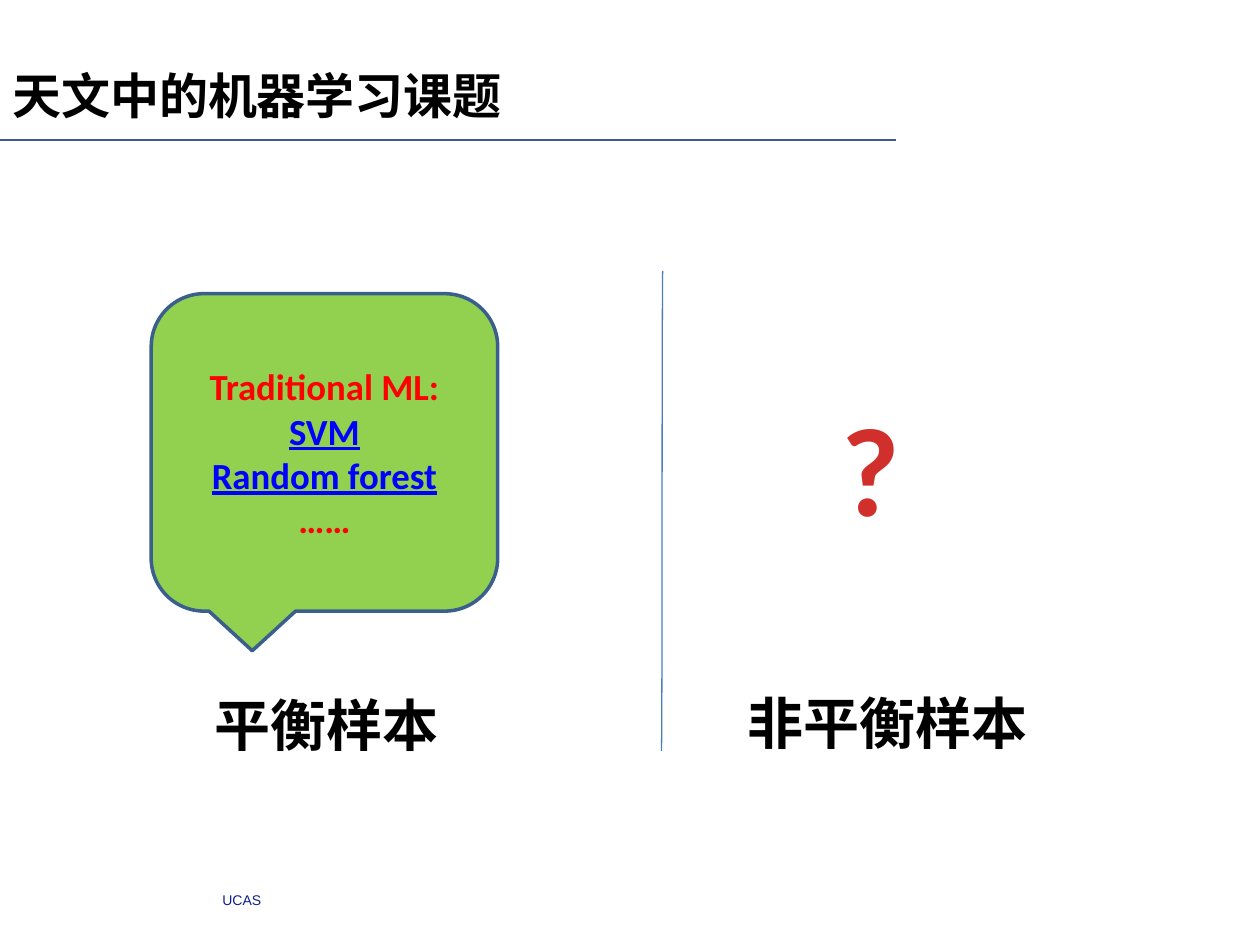
from dataclasses import dataclass

from lxml import etree
from pptx import Presentation
from pptx.dml.color import RGBColor
from pptx.enum.shapes import MSO_CONNECTOR, MSO_SHAPE
from pptx.enum.text import MSO_ANCHOR, PP_ALIGN
from pptx.oxml.ns import qn
from pptx.util import Pt

STRAIGHT, CURVE = MSO_CONNECTOR.STRAIGHT, MSO_CONNECTOR.CURVE
CALLOUT = MSO_SHAPE.ROUNDED_RECTANGULAR_CALLOUT
LEFT, CENTER = PP_ALIGN.LEFT, PP_ALIGN.CENTER
TOP, MIDDLE = MSO_ANCHOR.TOP, MSO_ANCHOR.MIDDLE


@dataclass(frozen=True)
class Theme:
    chinese: str = "Noto Sans CJK SC"
    latin: str = "Calibri"
    footer_font: str = "Arial"
    ink: str = "000000"
    rule: str = "415898"
    divider: str = "4B7EBC"
    footer: str = "0F208B"
    question: str = "D02F2C"
    bubble: str = "92D050"
    outline: str = "3A5F8C"
    accent: str = "FF0000"
    method: str = "0000FF"
    title_size: int = 28
    label_size: int = 32
    question_size: int = 72
    bubble_size: int = 21
    footer_size: int = 8


class SlideBuilder:
    """Draw styled elements on one page, with lengths in points."""

    def __init__(self, theme, page):
        self.theme = theme
        self.page = page

    def line(self, kind, start, end, color, width):
        connector = self.page.shapes.add_connector(kind, *map(Pt, start + end))
        connector.line.color.rgb = RGBColor.from_string(color)
        connector.line.width = Pt(width)
        etree.SubElement(connector._element.spPr, qn("a:effectLst"))

    def span(self, para, text, color, name, size, **formats):
        span = para.add_run()
        span.text = text
        values = {"name": name, "size": Pt(size), "bold": True, **formats}
        for key, value in values.items():
            setattr(span.font, key, value)
        span.font.color.rgb = RGBColor.from_string(color)
        etree.SubElement(span._r.rPr, qn("a:ea"), typeface=name)

    def text(self, area, text, color, name, size, align=LEFT, wrap=True, **formats):
        box = self.page.shapes.add_textbox(*map(Pt, area))
        frame = box.text_frame
        for key, value in {"word_wrap": wrap, "vertical_anchor": TOP}.items():
            setattr(frame, key, value)
        para = frame.paragraphs[0]
        para.alignment = align
        self.span(para, text, color, name, size, **formats)

    def callout(self, area, rows):
        theme = self.theme
        bubble = self.page.shapes.add_shape(CALLOUT, *map(Pt, area))
        bubble.shadow.inherit = False
        bubble.fill.solid()
        bubble.fill.fore_color.rgb = RGBColor.from_string(theme.bubble)
        bubble.line.color.rgb = RGBColor.from_string(theme.outline)
        bubble.line.width = Pt(2)
        frame = bubble.text_frame
        for key, value in {"word_wrap": True, "vertical_anchor": MIDDLE}.items():
            setattr(frame, key, value)
        for index, (text, is_method) in enumerate(rows):
            para = frame.add_paragraph() if index else frame.paragraphs[0]
            para.alignment = CENTER
            color = theme.method if is_method else theme.accent
            self.span(para, text, color, theme.latin, theme.bubble_size, underline=is_method)


def main():
    deck = Presentation()
    deck.slide_width, deck.slide_height = Pt(720), Pt(540)
    theme = Theme()
    builder = SlideBuilder(theme, deck.slides.add_slide(deck.slide_layouts[6]))

    builder.line(STRAIGHT, (0, 80), (512, 80), theme.rule, 0.78)
    builder.text((120, 506, 40, 17), "UCAS", theme.footer,
                 theme.footer_font, theme.footer_size, wrap=False, bold=False)
    labels = [("平衡样本", (115.2, 391, 201, 38)), ("非平衡样本", (419.8, 390.2, 345, 92))]
    for label, area in labels:
        builder.text(area, label, theme.ink, theme.chinese, theme.label_size)
    builder.line(CURVE, (378.7, 154.8), (378, 429.1), theme.divider, 0.75)
    builder.text((427.7, 219.6, 139.7, 92.2), "?", theme.question,
                 theme.latin, theme.question_size, align=CENTER)
    builder.callout((86.4, 167.8, 198, 181.4), [
        ("Traditional ML:", False),
        ("SVM", True),
        ("Random forest", True),
        ("……", False),
    ])
    builder.text((0, 33.8, 297.4, 41), "天文中的机器学习课题", theme.ink,
                 theme.chinese, theme.title_size, wrap=False)
    deck.save("out.pptx")


if __name__ == "__main__":
    main()
